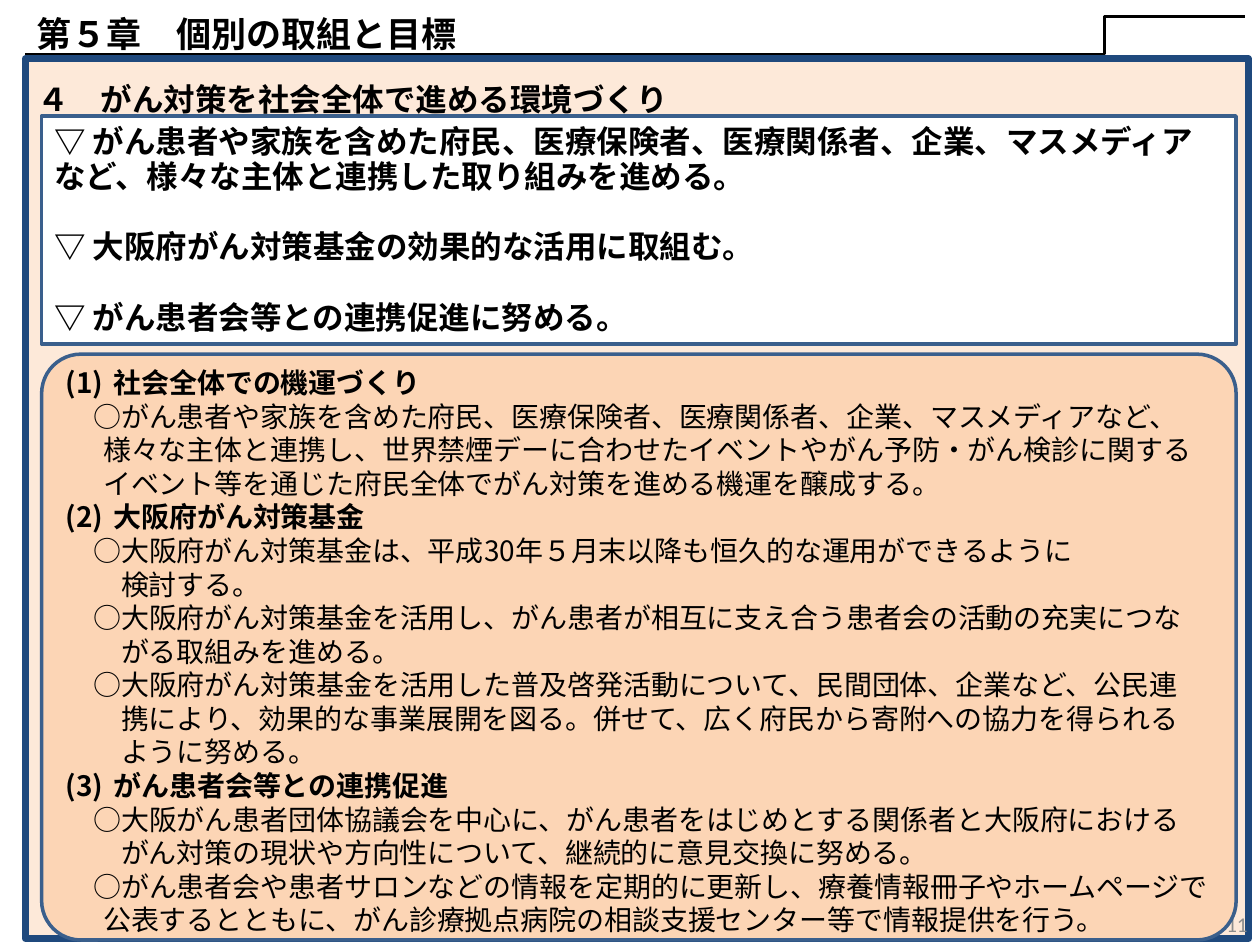
from typing import NamedTuple

from lxml.etree import SubElement as Sub
from pptx import Presentation
from pptx.dml.color import RGBColor as Rgb
from pptx.enum.shapes import MSO_CONNECTOR as Link, MSO_SHAPE as Geo
from pptx.enum.text import MSO_ANCHOR as Anchor, PP_ALIGN as Align
from pptx.oxml.ns import qn
from pptx.util import Cm, Pt

HUES = {"ink": "000000", "navy": "1F497D", "blue": "3A5F8C",
        "peach": "FCD5B5", "white": "FFFFFF", "gray": "8C8C8C"}
GOTHIC = "Noto Sans CJK JP"


class Panel(NamedTuple):
    left: float
    top: float
    width: float
    height: float
    fill: str
    line: str
    weight: float
    geo: Geo = Geo.RECTANGLE
    alpha: int = 100


class Style(NamedTuple):
    left: float = 0
    first: float = 0
    bold: bool = False


HEAD = Style(0.97, -0.97, True)
ITEM = Style(0.76, -0.2)
MORE = Style(1.12)
BOLD = Style(bold=True)

GOALS = [
    "▽ がん患者や家族を含めた府民、医療保険者、医療関係者、企業、マスメディアなど、様々な主体と連携した取り組みを進める。",
    "▽ 大阪府がん対策基金の効果的な活用に取組む。",
    "▽ がん患者会等との連携促進に努める。",
]

PLANS = [
    (HEAD, "社会全体での機運づくり"),
    (ITEM, "○がん患者や家族を含めた府民、医療保険者、医療関係者、企業、マスメディアなど、様々な主体と連携し、世界禁煙デーに合わせたイベントやがん予防・がん検診に関するイベント等を通じた府民全体でがん対策を進める機運を醸成する。"),
    (HEAD, "大阪府がん対策基金"),
    (ITEM, "○大阪府がん対策基金は、平成30年５月末以降も恒久的な運用ができるように"),
    (MORE, "検討する。"),
    (ITEM, "○大阪府がん対策基金を活用し、がん患者が相互に支え合う患者会の活動の充実につな"),
    (MORE, "がる取組みを進める。"),
    (ITEM, "○大阪府がん対策基金を活用した普及啓発活動について、民間団体、企業など、公民連"),
    (MORE, "携により、効果的な事業展開を図る。併せて、広く府民から寄附への協力を得られる"),
    (MORE, "ように努める。"),
    (HEAD, "がん患者会等との連携促進"),
    (ITEM, "○大阪がん患者団体協議会を中心に、がん患者をはじめとする関係者と大阪府における"),
    (MORE, "がん対策の現状や方向性について、継続的に意見交換に努める。"),
    (ITEM, "○がん患者会や患者サロンなどの情報を定期的に更新し、療養情報冊子やホームページで公表するとともに、がん診療拠点病院の相談支援センター等で情報提供を行う。"),
]


def tint(name: str) -> Rgb:
    return Rgb.from_string(HUES[name])


def write(shape, lines: list, *, size: float, pitch: float = 0, gap: float = 0,
          font: str = GOTHIC, hue: str = "ink", align=Align.LEFT,
          anchor=Anchor.TOP, inset: float = 0.13) -> None:
    frame = shape.text_frame
    frame.word_wrap = True
    frame.vertical_anchor = anchor
    frame.margin_top = Cm(inset)
    count = 0
    for i, (style, text) in enumerate(lines):
        para = frame.paragraphs[0] if i == 0 else frame.add_paragraph()
        para.alignment = align
        if pitch:
            para.line_spacing = Pt(pitch)
        if gap and i:
            para.space_before = Pt(gap)
        props = para._p.get_or_add_pPr()
        if style.left:
            props.set("marL", str(Cm(style.left)))
            props.set("indent", str(Cm(style.first)))
        if style is HEAD:
            count += 1
            Sub(props, qn("a:buFont"), typeface=font)
            Sub(props, qn("a:buAutoNum"), type="arabicParenBoth", startAt=str(count))
        run = para.add_run()
        run.text = text
        run.font.size = Pt(size)
        run.font.bold = style.bold
        run.font.color.rgb = tint(hue)
        run.font.name = font
        Sub(run._r.get_or_add_rPr(), qn("a:ea"), typeface=font)


def draw(slide, panel: Panel):
    shape = slide.shapes.add_shape(panel.geo, *map(Cm, panel[:4]))
    shape.shadow.inherit = False
    shape.fill.solid()
    shape.fill.fore_color.rgb = tint(panel.fill)
    shape.line.color.rgb = tint(panel.line)
    shape.line.width = Pt(panel.weight)
    if panel.alpha < 100:
        tone = shape._element.spPr.find(qn("a:solidFill"))[0]
        Sub(tone, qn("a:alpha"), val=str(panel.alpha * 1000))
    return shape


def step(slide, start: tuple, end: tuple, bend: float) -> None:
    line = slide.shapes.add_connector(Link.ELBOW, *map(Cm, start + end))
    line.line.color.rgb = tint("ink")
    line.line.width = Pt(1.5)
    props = line._element.spPr
    guide = props.find(qn("a:prstGeom")).find(qn("a:avLst"))
    Sub(guide, qn("a:gd"), name="adj1", fmla=f"val {round(bend * 100000)}")
    Sub(props, qn("a:effectLst"))


def main() -> None:
    deck = Presentation()
    deck.slide_width, deck.slide_height = Cm(25.4), Cm(19.05)
    slide = deck.slides.add_slide(deck.slide_layouts[6])

    back = draw(slide, Panel(0.51, 1.19, 24.66, 17.73, "peach", "navy", 4, alpha=50))
    write(back, [(BOLD, "４　がん対策を社会全体で進める環境づくり")],
          size=18, pitch=22, inset=0.41)

    title = slide.shapes.add_textbox(*map(Cm, (0.48, 0.08, 17.81, 1.12)))
    write(title, [(BOLD, "第５章　個別の取組と目標")], size=20, pitch=25)
    step(slide, (0.51, 1.09), (25.1, 0.33), 0.885)

    page = slide.shapes.add_textbox(*map(Cm, (19.48, 17.98, 5.92, 1.02)))
    write(page, [(Style(), "11")], size=12, font="Calibri", hue="gray",
          align=Align.RIGHT, anchor=Anchor.BOTTOM)

    goals = draw(slide, Panel(0.84, 2.34, 24.08, 4.6, "white", "blue", 2))
    write(goals, [(BOLD, text) for text in GOALS], size=18, pitch=20, gap=20,
          anchor=Anchor.MIDDLE)

    plans = draw(slide, Panel(0.84, 7.14, 24.08, 11.81, "peach", "blue", 2,
                              Geo.ROUNDED_RECTANGLE))
    plans.adjustments[0] = 0.067
    write(plans, PLANS, size=16, pitch=19.2, inset=0)

    deck.save("out.pptx")


if __name__ == "__main__":
    main()
